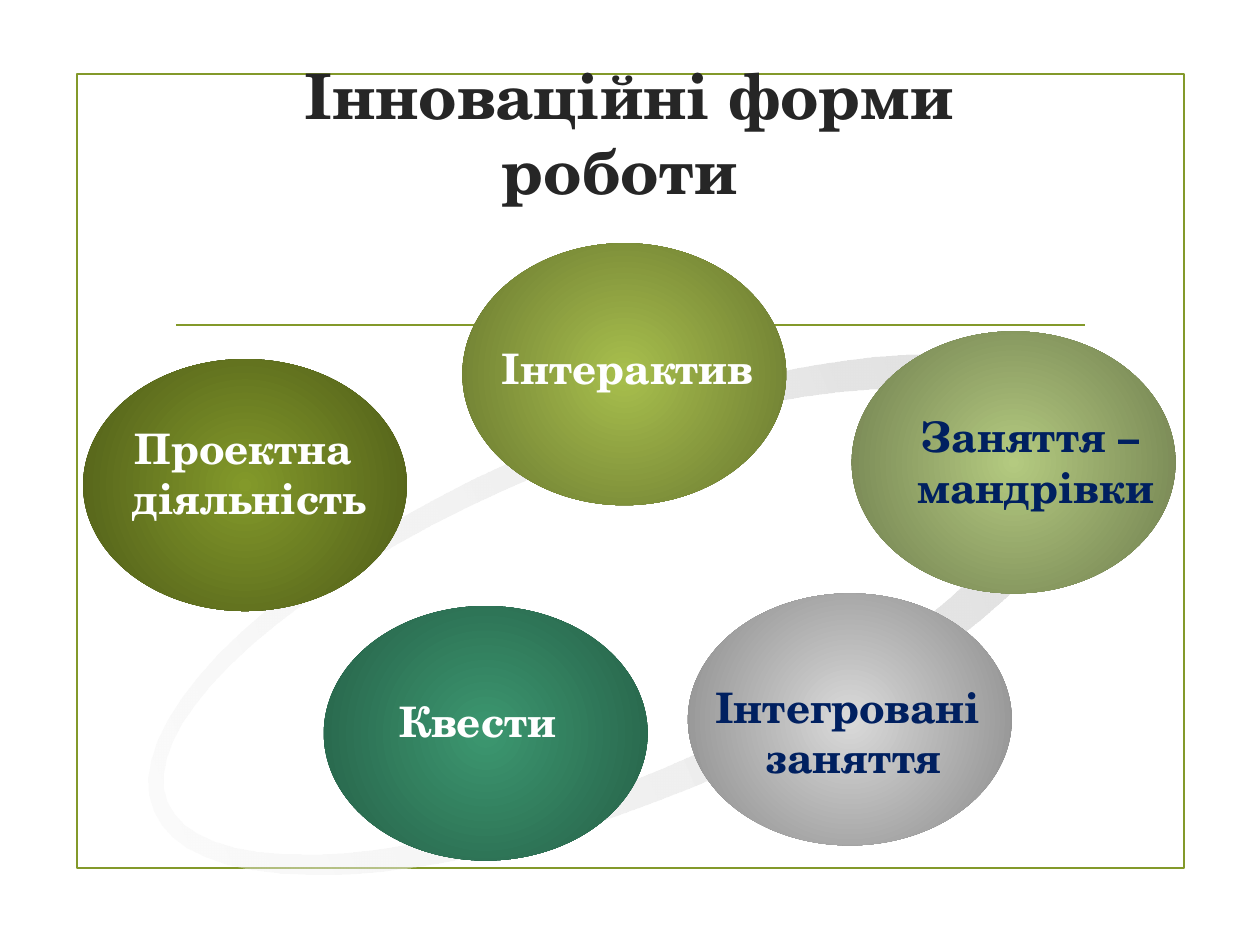
import math

import lxml.etree
import pptx
import pptx.dml.color
import pptx.enum.shapes
import pptx.enum.text
import pptx.oxml
import pptx.oxml.ns
import pptx.util

Inches = pptx.util.Inches
SHAPES = pptx.enum.shapes.MSO_SHAPE
CENTER = pptx.enum.text.PP_ALIGN.CENTER
LEFT = pptx.enum.text.PP_ALIGN.LEFT
GREEN, WHITE, NAVY = "83992A", "FFFFFF", "002060"
FONT = "TeX Gyre Schola"


def color(value):
    return pptx.dml.color.RGBColor.from_string(value)


def gradient_fill(shape, start, end, direction, alpha=100):
    shape.shadow.inherit = False
    shape.line.fill.background()
    shape.fill.background()
    gradient = pptx.oxml.parse_xml(
        f'<a:gradFill {pptx.oxml.ns.nsdecls("a")} rotWithShape="1"><a:gsLst>'
        f'<a:gs pos="0"><a:srgbClr val="{start}"><a:alpha val="{alpha * 1000}"/></a:srgbClr></a:gs>'
        f'<a:gs pos="100000"><a:srgbClr val="{end}"/></a:gs>'
        f'</a:gsLst>{direction}</a:gradFill>')
    properties = shape.element.spPr
    properties.replace(properties.find(pptx.oxml.ns.qn("a:noFill")), gradient)


deck = pptx.Presentation()
deck.slide_width, deck.slide_height = Inches(10), Inches(7.5)
slide = deck.slides.add_slide(deck.slide_layouts[6])
shapes = slide.shapes

frame = shapes.add_shape(SHAPES.RECTANGLE, Inches(0.61), Inches(0.59), Inches(8.79), Inches(6.3))
frame.shadow.inherit = False
frame.fill.background()
divider = shapes.add_connector(pptx.enum.shapes.MSO_CONNECTOR.STRAIGHT,
                               Inches(1.4), Inches(2.58), Inches(8.61), Inches(2.58))
lxml.etree.SubElement(divider.element.spPr, pptx.oxml.ns.qn("a:effectLst"))
for border in (frame, divider):
    border.line.color.rgb = color(GREEN)
    border.line.width = pptx.util.Pt(1.25)

title = (1.2, 0.51, 7.44, 1.07, [" Інноваційні форми роботи"], 36, "262626", CENTER)

ring_edges = []
for center_x, center_y, radius_x, radius_y in [(4.95, 4.88, 4.04, 1.47), (4.76, 4.86, 3.72, 1.26)]:
    angles = [math.radians(step * 5) for step in range(72)]
    ring_edges.append([(Inches(center_x + radius_x * math.cos(angle)),
                        Inches(center_y + radius_y * math.sin(angle))) for angle in angles])
outer, inner = ring_edges
ring_builder = shapes.build_freeform(*outer[0])
ring_builder.add_line_segments(outer[1:], close=True)
ring_builder.move_to(*inner[0])
ring_builder.add_line_segments(inner[1:], close=True)
ring = ring_builder.convert_to_shape()
ring.rotation = 337.4
gradient_fill(ring, "F5F5F5", "DADADA", '<a:lin ang="0" scaled="1"/>', alpha=36)

radial = '<a:path path="circle"><a:fillToRect l="50000" t="50000" r="50000" b="50000"/></a:path>'
for left, top, height, middle, edge in [
    (3.67, 1.93, 2.08, "A8BF4D", "67752F"),
    (0.66, 2.85, 2, GREEN, "4D5A18"),
    (2.57, 4.81, 2.02, "3C9770", "255E46"),
    (5.46, 4.71, 2, "DADADA", "888888"),
    (6.76, 2.63, 2.08, "B4CA80", "6E7C4E"),
]:
    bubble = shapes.add_shape(SHAPES.OVAL, Inches(left), Inches(top), Inches(2.57), Inches(height))
    gradient_fill(bubble, middle, edge, radial)

for left, top, width, height, lines, size, ink, alignment in [
    title,
    (0.82, 3.3, 2.32, 0.91, ["Проектна ", "діяльність"], 24, WHITE, CENTER),
    (3.86, 2.67, 2.24, 0.5, ["Інтерактив"], 24, WHITE, CENTER),
    (7.16, 3.21, 2.12, 0.91, ["Заняття – ", "мандрівки"], 24, NAVY, CENTER),
    (5.43, 5.36, 2.6, 0.91, ["Інтегровані", " заняття"], 24, NAVY, CENTER),
    (3.07, 5.47, 1.48, 0.5, ["Квести"], 24, WHITE, LEFT),
]:
    label = shapes.add_textbox(Inches(left), Inches(top), Inches(width), Inches(height)).text_frame
    label.word_wrap = True
    label.text = "\n".join(lines)
    if lines is title[4]:
        label.vertical_anchor = pptx.enum.text.MSO_ANCHOR.MIDDLE
    else:
        label.auto_size = pptx.enum.text.MSO_AUTO_SIZE.SHAPE_TO_FIT_TEXT
    for paragraph in label.paragraphs:
        paragraph.alignment = alignment
        font = paragraph.runs[0].font
        for attribute, value in {"name": FONT, "size": pptx.util.Pt(size), "bold": True}.items():
            setattr(font, attribute, value)
        font.color.rgb = color(ink)

deck.save("out.pptx")
